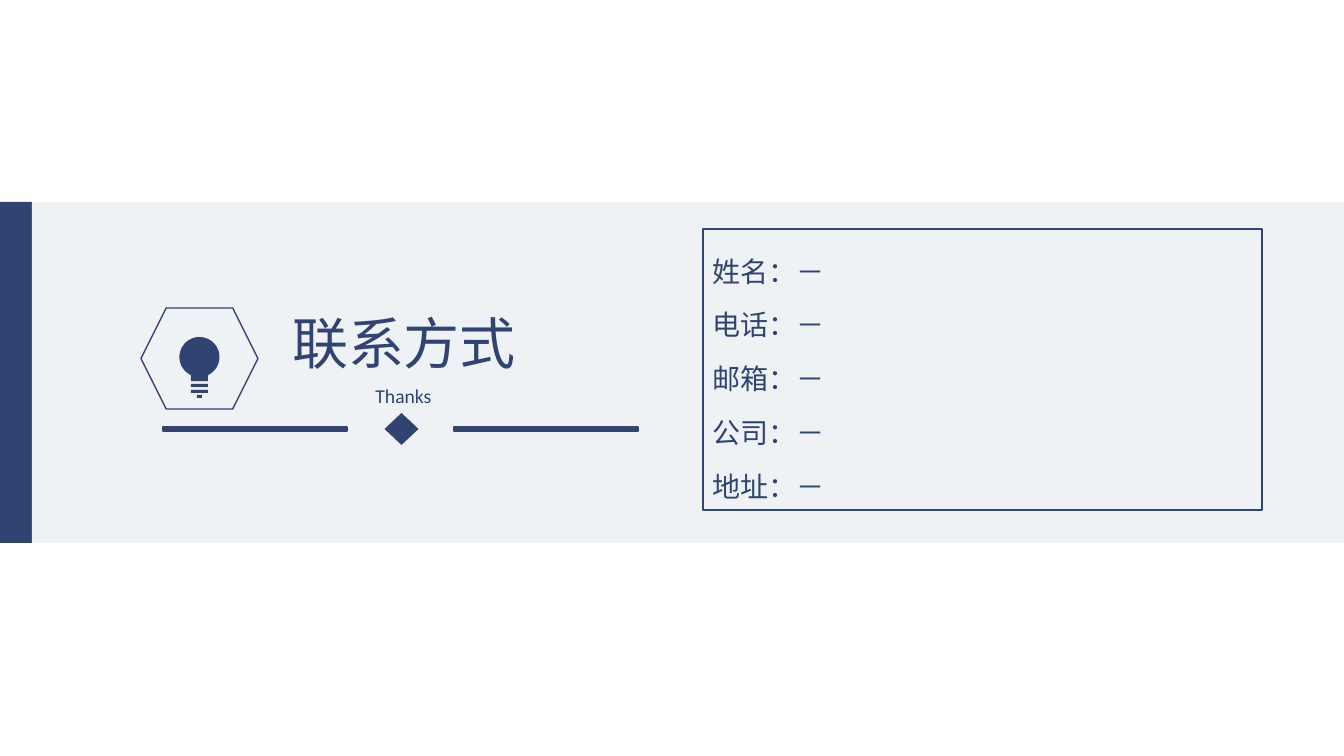
from dataclasses import dataclass
from math import cos, radians, sin

from lxml.etree import SubElement
from pptx import Presentation
from pptx.dml.color import RGBColor
from pptx.enum.shapes import MSO_SHAPE as SHAPE
from pptx.enum.text import MSO_ANCHOR as ANCHOR, PP_ALIGN as ALIGN
from pptx.oxml.ns import qn
from pptx.util import Emu, Pt


@dataclass(frozen=True)
class Theme:
    navy: RGBColor = RGBColor(0x30, 0x43, 0x71)
    pale: RGBColor = RGBColor(0xEE, 0xF2, 0xF5)
    cjk: str = "Noto Sans CJK SC"
    latin: str = "Calibri"
    title: int = 40
    contact: int = 20
    caption: int = 14
    line: int = 1


THEME = Theme()
SCALE = 914400 / 100.8


def px(n):
    return Emu(round(n * SCALE))


def style(s, fill=None, line=None):
    s.shadow.inherit = False
    if fill is None:
        s.fill.background()
    else:
        s.fill.solid()
        s.fill.fore_color.rgb = fill
    if line is None:
        s.line.fill.background()
    else:
        s.line.color.rgb = line
        s.line.width = Pt(THEME.line)


def add_shape(slide, kind, x, y, w, h, fill=None, line=None):
    s = slide.shapes.add_shape(kind, px(x), px(y), px(w), px(h))
    style(s, fill, line)
    return s


def write(s, lines, size, font, align, spacing=1.0, anchor=ANCHOR.TOP):
    tf = s.text_frame
    tf.word_wrap = True
    tf.vertical_anchor = anchor
    tf.text = "\n".join(lines)
    for p in tf.paragraphs:
        p.alignment = align
        p.line_spacing = spacing
        p.font.size = Pt(size)
        p.font.name = font
        p.font.color.rgb = THEME.navy
        props = p._p.pPr.find(qn("a:defRPr"))
        SubElement(props, qn("a:ea")).set("typeface", font)


def add_text(slide, x, y, w, h, *args, **kwargs):
    s = slide.shapes.add_textbox(px(x), px(y), px(w), px(h))
    write(s, *args, **kwargs)


def add_band(slide, x, y, w, h):
    edge = 32
    add_shape(slide, SHAPE.RECTANGLE, x, y, edge, h, THEME.navy)
    add_shape(slide, SHAPE.RECTANGLE, x + edge, y, w - edge, h, THEME.pale)


def add_bulb(slide, x, y, w):
    radius, neck, base = w / 2, 17, 44
    cx, cy = x + radius, y + radius
    glass = [(cx + radius * cos(radians(a)), cy + radius * sin(radians(a)))
             for a in range(115, 426, 5)]
    outline = [(cx - neck / 2, y + base), *glass, (cx + neck / 2, y + base)]
    points = [(px(a), px(b)) for a, b in outline]
    builder = slide.shapes.build_freeform(*points[0], scale=1.0)
    builder.add_line_segments(points[1:], close=True)
    style(builder.convert_to_shape(), THEME.navy)
    for top, width in ((47, neck), (53, neck), (58, 5)):
        add_shape(slide, SHAPE.RECTANGLE, cx - width / 2, y + top, width, 3, THEME.navy)


def add_badge(slide, x, y, w, h):
    add_shape(slide, SHAPE.HEXAGON, x, y, w, h, line=THEME.navy)
    bulb = 40
    add_bulb(slide, x + (w - bulb) / 2, y + 29, bulb)


def add_divider(slide, x, y, w, h):
    bar, thick, gem = 184, 4, 34
    for left in (x, x + w - bar):
        add_shape(slide, SHAPE.RECTANGLE, left, y + (h - thick) / 2, bar, thick,
                  THEME.navy, THEME.navy)
    add_shape(slide, SHAPE.DIAMOND, x + (w - gem) / 2 + 1, y, gem, h, THEME.navy)


def add_heading(slide, x, y, w, h):
    add_badge(slide, x, y + 17, 117, 101)
    add_text(slide, x + 102, y, 322, 91, ["联系方式"], THEME.title, THEME.cjk,
             ALIGN.CENTER, spacing=0.9, anchor=ANCHOR.BOTTOM)
    add_text(slide, x + 143, y + 88, 239, 34, ["Thanks"], THEME.caption,
             THEME.latin, ALIGN.CENTER)
    add_divider(slide, x + 22, y + h - 32, w - 22, 32)


def add_contacts(slide, x, y, w, h):
    panel = add_shape(slide, SHAPE.RECTANGLE, x, y, w, h, line=THEME.navy)
    labels = ("姓名", "电话", "邮箱", "公司", "地址")
    write(panel, [f"{label}：－" for label in labels], THEME.contact, THEME.cjk,
          ALIGN.LEFT, spacing=1.6)


def main():
    prs = Presentation()
    prs.slide_width, prs.slide_height = px(1344), px(756)
    slide = prs.slides.add_slide(prs.slide_layouts[6])
    add_band(slide, 0, 202, 1344, 341)
    add_heading(slide, 141, 291, 497, 154)
    add_contacts(slide, 703, 229, 559, 281)
    prs.save("out.pptx")


if __name__ == "__main__":
    main()
